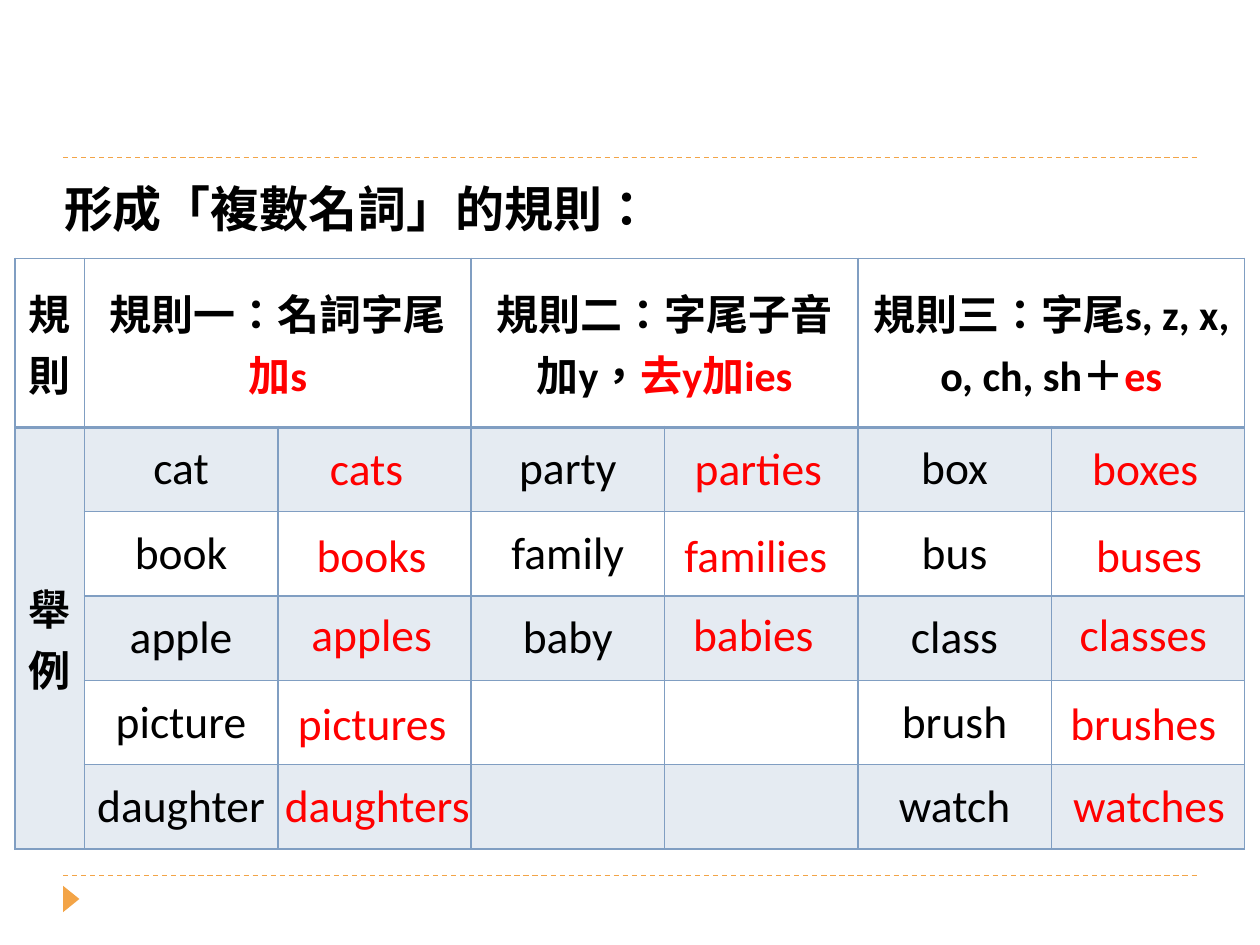
import pptx
import pptx.dml.color
import pptx.enum.dml
import pptx.enum.shapes
import pptx.enum.text
import pptx.oxml
import pptx.oxml.ns
import pptx.util
from pptx.util import Inches

RGBColor = pptx.dml.color.RGBColor
BLACK = RGBColor(0x00, 0x00, 0x00)
RED = RGBColor(0xFF, 0x00, 0x00)
ORANGE = RGBColor(0xF3, 0xA4, 0x47)
BLUE = RGBColor(0x80, 0x9E, 0xC2)

LATIN_FONT = "Calibri"
CHINESE_FONT = "Noto Sans CJK SC"
CENTER = pptx.enum.text.PP_ALIGN.CENTER
MIDDLE = pptx.enum.text.MSO_ANCHOR.MIDDLE

TABLE_LEFT, TABLE_TOP = 0.12, 2.05
COLUMN_WIDTHS = [0.55] + [1.535] * 6
ROW_HEIGHTS = [1.34] + [0.67] * 5

RULES = [
    [("規則一：名詞字尾", BLACK), ("加s", RED)],
    [("規則二：字尾子音加y，", BLACK), ("去y加ies", RED)],
    [("規則三：字尾s, z, x, o, ch, sh＋", BLACK), ("es", RED)],
]
SINGULARS = [
    ["cat", "book", "apple", "picture", "daughter"],
    ["party", "family", "baby"],
    ["box", "bus", "class", "brush", "watch"],
]
PLURAL_TOPS = [3.44, 4.13, 4.76, 5.46, 6.11]
PLURALS = [
    [("cats", 2.4, 1.02), ("books", 2.32, 1.26), ("apples", 2.24, 1.42),
     ("pictures", 2.17, 1.57), ("daughters", 2.01, 1.97)],
    [("parties", 5.31, 1.42), ("families", 5.24, 1.52), ("babies", 5.31, 1.34)],
    [("boxes", 8.46, 1.26), ("buses", 8.51, 1.22), ("classes", 8.35, 1.45),
     ("brushes", 8.31, 1.53), ("watches", 8.28, 1.68)],
]


def apply_format(target, values):
    for name, value in values.items():
        setattr(target, name, value)


def add_child(parent, tag, **attributes):
    child = pptx.oxml.ns.qn(tag)
    element = parent.makeelement(child, attributes)
    parent.append(element)
    return element


def add_run(paragraph, text, size, color, bold=False, latin=LATIN_FONT):
    run = paragraph.add_run()
    run.text = text
    apply_format(run.font, {"size": pptx.util.Pt(size), "bold": bold, "name": latin})
    run.font.color.rgb = color
    properties = run.font._element
    properties.set("lang", "zh-TW")
    add_child(properties, "a:ea", typeface=CHINESE_FONT)


def add_divider(slide, top):
    divider = slide.shapes.add_connector(
        pptx.enum.shapes.MSO_CONNECTOR.STRAIGHT,
        Inches(0.5), Inches(top), Inches(9.5), Inches(top))
    divider.line.color.rgb = ORANGE
    apply_format(divider.line, {
        "width": pptx.util.Pt(0.75),
        "dash_style": pptx.enum.dml.MSO_LINE.DASH})
    add_child(divider._element.spPr, "a:effectLst")


def add_marker(slide):
    marker = slide.shapes.add_shape(
        pptx.enum.shapes.MSO_SHAPE.ISOSCELES_TRIANGLE,
        Inches(0.46), Inches(7.07), Inches(0.21), Inches(0.13))
    marker.rotation = 90
    marker.shadow.inherit = False
    marker.fill.solid()
    marker.fill.fore_color.rgb = ORANGE
    marker.line.fill.background()


def add_heading(slide):
    heading = slide.shapes.add_textbox(
        Inches(0.41), Inches(1.37), Inches(4.91), Inches(0.57))
    heading.text_frame.word_wrap = False
    add_run(heading.text_frame.paragraphs[0], "形成「複數名詞」的規則：",
            28, BLACK, True, CHINESE_FONT)


def add_plural(slide, word, left, top, width):
    plural = slide.shapes.add_textbox(
        Inches(left), Inches(top), Inches(width), Inches(0.54))
    apply_format(plural.text_frame, {"word_wrap": True, "vertical_anchor": MIDDLE})
    paragraph = plural.text_frame.paragraphs[0]
    paragraph.alignment = CENTER
    add_run(paragraph, word, 26, RED)


def write_cell(cell, lines, size, bold, latin=LATIN_FONT):
    for index, line in enumerate(lines):
        frame = cell.text_frame
        paragraph = frame.add_paragraph() if index else frame.paragraphs[0]
        paragraph.alignment = CENTER
        for text, color in line:
            add_run(paragraph, text, size, color, bold, latin)


def add_border(cell, side, width):
    border = add_child(cell._tc.get_or_add_tcPr(), f"a:ln{side}",
                       w=str(pptx.util.Pt(width)))
    add_child(add_child(border, "a:solidFill"), "a:srgbClr", val=str(BLUE))


def style_cell(cell, row):
    apply_format(cell, {
        "vertical_anchor": MIDDLE,
        "margin_left": Inches(0.07), "margin_right": Inches(0.07),
        "margin_top": 0, "margin_bottom": 0})
    widths = {"L": 1, "R": 1, "T": 2 if row == 1 else 1, "B": 2 if row == 0 else 1}
    for side, width in widths.items():
        add_border(cell, side, width)
    if row % 2:
        cell.fill.solid()
        cell.fill.fore_color.rgb = BLUE
        tint = cell._tc.tcPr.find(
            f"{pptx.oxml.ns.qn('a:solidFill')}/{pptx.oxml.ns.qn('a:srgbClr')}")
        add_child(tint, "a:alpha", val="20000")
    else:
        cell.fill.background()


def add_rules_table(slide):
    table = slide.shapes.add_table(
        len(ROW_HEIGHTS), len(COLUMN_WIDTHS), Inches(TABLE_LEFT), Inches(TABLE_TOP),
        Inches(sum(COLUMN_WIDTHS)), Inches(sum(ROW_HEIGHTS))).table
    apply_format(table, {"first_row": False, "horz_banding": False})
    for column, width in zip(table.columns, COLUMN_WIDTHS):
        column.width = Inches(width)
    for row, height in zip(table.rows, ROW_HEIGHTS):
        row.height = Inches(height)
    for row in range(len(ROW_HEIGHTS)):
        for column in range(len(COLUMN_WIDTHS)):
            style_cell(table.cell(row, column), 1 if column == 0 and row else row)

    table.cell(1, 0).merge(table.cell(5, 0))
    for row, label in enumerate(["規則", "舉例"]):
        write_cell(table.cell(row, 0), [[(letter, BLACK)] for letter in label],
                   24, True, CHINESE_FONT)
    for group, (rule, words) in enumerate(zip(RULES, SINGULARS)):
        column = 1 + 2 * group
        table.cell(0, column).merge(table.cell(0, column + 1))
        write_cell(table.cell(0, column), [rule], 24, True)
        for row, word in enumerate(words, start=1):
            write_cell(table.cell(row, column), [[(word, BLACK)]], 26, False)


def main():
    presentation = pptx.Presentation()
    apply_format(presentation, {"slide_width": Inches(10), "slide_height": Inches(7.5)})
    slide = presentation.slides.add_slide(presentation.slide_layouts[6])
    for top in (6.95, 1.25):
        add_divider(slide, top)
    add_marker(slide)
    add_heading(slide)
    add_rules_table(slide)
    for group in PLURALS:
        for (word, left, width), top in zip(group, PLURAL_TOPS):
            add_plural(slide, word, left, top, width)
    presentation.save("out.pptx")


if __name__ == "__main__":
    main()
